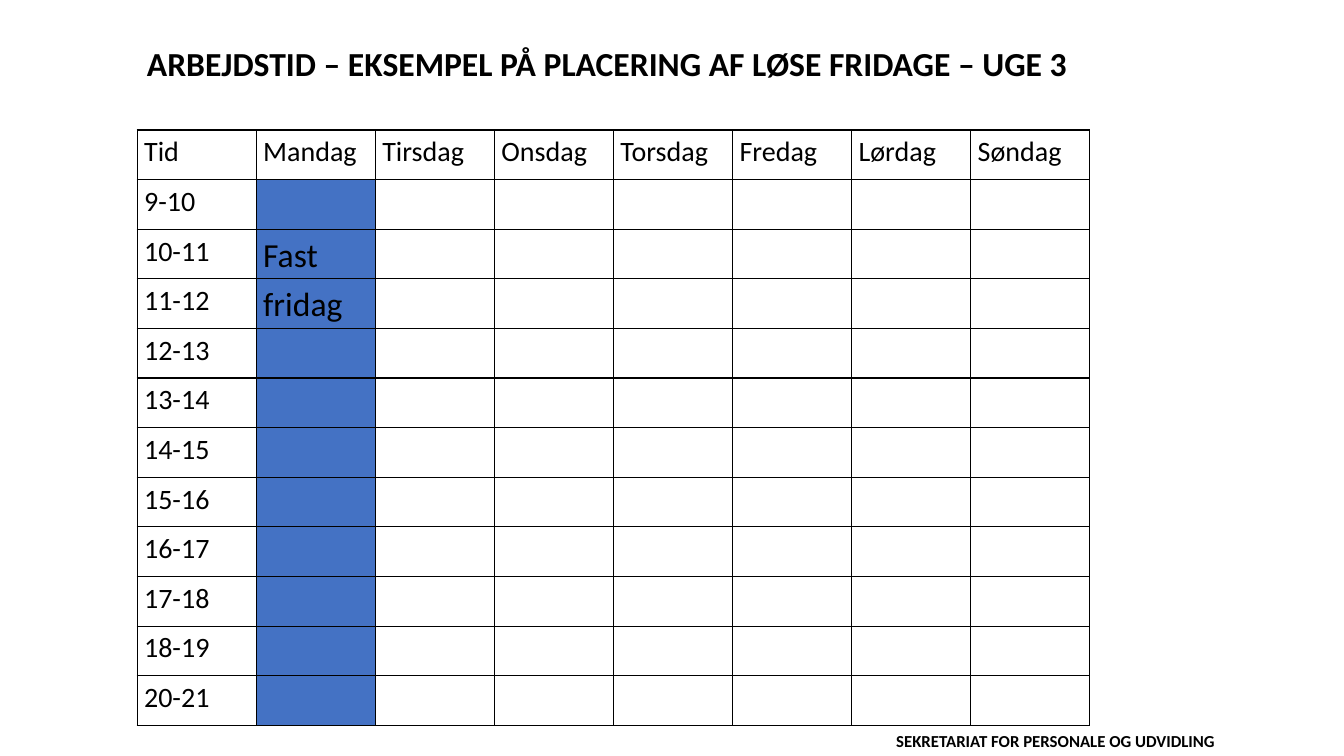
from lxml.etree import SubElement
from pptx import Presentation
from pptx.dml.color import RGBColor
from pptx.enum.text import MSO_AUTO_SIZE
from pptx.oxml import parse_xml
from pptx.oxml.ns import nsdecls
from pptx.util import Inches, Pt

BLACK = RGBColor(0x00, 0x00, 0x00)
WHITE = RGBColor(0xFF, 0xFF, 0xFF)
DAY_OFF_BLUE = RGBColor(0x44, 0x72, 0xC4)

FONT = "Calibri"
HEADINGS = ["Tid", "Mandag", "Tirsdag", "Onsdag", "Torsdag", "Fredag", "Lørdag", "Søndag"]
HOURS = ["9-10", "10-11", "11-12", "12-13", "13-14", "14-15",
         "15-16", "16-17", "17-18", "18-19", "20-21"]
DAY_OFF = HEADINGS.index("Mandag")
DAY_OFF_WORDS = {"10-11": "Fast", "11-12": "fridag"}


def write(tf, text, size, bold=False, spacing=None):
    p = tf.paragraphs[0]
    p.line_spacing = spacing
    r = p.add_run()
    r.text = text
    r.font.name = FONT
    r.font.size = Pt(size)
    r.font.bold = bold
    r.font.color.rgb = BLACK


def add_label(s, left, top, width, height, text, size):
    tf = s.shapes.add_textbox(Inches(left), Inches(top), Inches(width), Inches(height)).text_frame
    tf.word_wrap = True
    tf.auto_size = MSO_AUTO_SIZE.SHAPE_TO_FIT_TEXT
    write(tf, text, size, bold=True)


def add_borders(cell):
    tcPr = cell._tc.get_or_add_tcPr()
    for i, side in enumerate(("lnL", "lnR", "lnT", "lnB")):
        tcPr.insert(i, parse_xml(
            f'<a:{side} {nsdecls("a")} w="{Pt(1)}"><a:solidFill>'
            f'<a:srgbClr val="{BLACK}"/></a:solidFill></a:{side}>'))


def fill_cell(cell, color):
    if color is None:
        cell.fill.background()
    else:
        cell.fill.solid()
        cell.fill.fore_color.rgb = color


def add_schedule(s, left, top, width, height):
    rows = [HEADINGS]
    for hour in HOURS:
        row = [hour] + [""] * (len(HEADINGS) - 1)
        row[DAY_OFF] = DAY_OFF_WORDS.get(hour, "")
        rows.append(row)

    table = s.shapes.add_table(len(rows), len(HEADINGS), Inches(left), Inches(top),
                               Inches(width), Inches(height)).table
    table.first_row = table.horz_banding = False
    for column in table.columns:
        column.width = Inches(width / len(HEADINGS))
    for row in table.rows:
        row.height = Inches(height / len(rows))

    for i, row in enumerate(rows):
        for j, text in enumerate(row):
            cell = table.cell(i, j)
            cell.margin_left = cell.margin_right = Inches(0.07)
            cell.margin_top = cell.margin_bottom = 0
            is_label = i == 0 or j == 0
            fill_cell(cell, None if is_label else DAY_OFF_BLUE if j == DAY_OFF else WHITE)
            add_borders(cell)
            if text:
                write(cell.text_frame, text, 20 if is_label else 24, spacing=1.15)


def main():
    prs = Presentation()
    prs.slide_width, prs.slide_height = Inches(13.33), Inches(7.5)
    s = prs.slides.add_slide(prs.slide_layouts[6])
    add_label(s, 8.79, 7.2, 3.59, 0.3, "SEKRETARIAT FOR PERSONALE OG UDVIDLING", 12)
    add_label(s, 1.36, 0.38, 9.73, 0.5,
              "ARBEJDSTID – EKSEMPEL PÅ PLACERING AF LØSE FRIDAGE – UGE 3", 24)
    add_schedule(s, 1.36, 1.29, 9.45, 5.91)
    prs.save("out.pptx")


if __name__ == "__main__":
    main()
